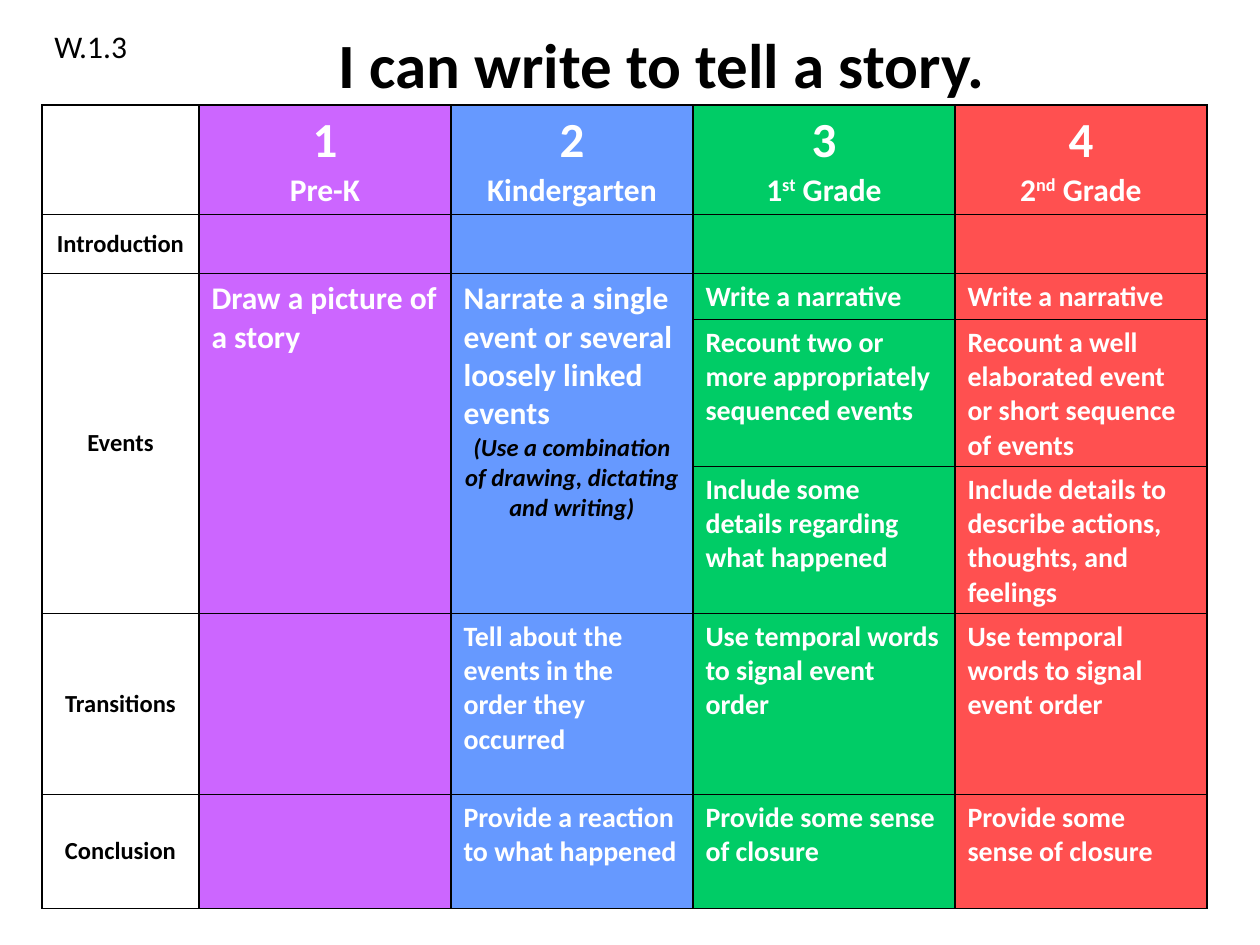
from lxml.etree import SubElement
from pptx import Presentation
from pptx.dml.color import RGBColor
from pptx.enum.text import MSO_ANCHOR, PP_ALIGN
from pptx.oxml.ns import qn
from pptx.util import Emu, Pt

SCALE = 914400 / 126
FONT = "Calibri"
COLORS = {"black": "000000", "white": "FFFFFF", "purple": "CC66FF",
          "blue": "6699FF", "green": "00CC66", "red": "FF5050"}
FILLS = [None, "purple", "blue", "green", "red"]
WIDTHS = [157, 252, 242, 262, 252]
HEIGHTS = [109, 59, 46, 147, 147, 181, 114]
GRADES = [[("Pre-K", 0)], [("Kindergarten", 0)],
          [("1", 0), ("st", 30), (" Grade", 0)],
          [("2", 0), ("nd", 30), (" Grade", 0)]]
LABELS = {1: "Introduction", 2: "Events", 5: "Transitions", 6: "Conclusion"}
GOALS = [
    (2, 1, "Draw a picture of a story", 18),
    (2, 2, "Narrate a single event or several loosely linked events", 18),
    (2, 3, "Write a narrative", 16),
    (2, 4, "Write a narrative", 16),
    (3, 3, "Recount two or more appropriately sequenced events", 16),
    (3, 4, "Recount a well elaborated event or short sequence of events", 16),
    (4, 3, "Include some details regarding what happened", 16),
    (4, 4, "Include details to describe actions, thoughts, and feelings", 16),
    (5, 2, "Tell about the events in the order they occurred", 16),
    (5, 3, "Use temporal words to signal event order", 16),
    (5, 4, "Use temporal words to signal event order", 16),
    (6, 2, "Provide a reaction to what happened", 16),
    (6, 3, "Provide some sense of closure", 16),
    (6, 4, "Provide some sense of closure", 16),
]


def px(n):
    return Emu(round(n * SCALE))


def rgb(name):
    return RGBColor.from_string(COLORS[name])


def add_run(para, text, size, color, bold=True, italic=False, raised=0):
    run = para.add_run()
    run.text = text
    font = run.font
    font.name, font.size = FONT, Pt(size)
    font.bold, font.italic = bold, italic
    font.color.rgb = rgb(color)
    if raised:
        run._r.get_or_add_rPr().set("baseline", str(raised * 1000))


def add_label(slide, box, text, size, bold, align, anchor):
    frame = slide.shapes.add_textbox(*map(px, box)).text_frame
    frame.word_wrap = True
    frame.vertical_anchor = anchor
    para = frame.paragraphs[0]
    para.alignment = align
    add_run(para, text, size, "black", bold)


def style_cell(cell, color):
    props = cell._tc.get_or_add_tcPr()
    for side in ("lnL", "lnR", "lnT", "lnB"):
        line = SubElement(props, qn(f"a:{side}"), w=str(Pt(1)))
        fill = SubElement(line, qn("a:solidFill"))
        SubElement(fill, qn("a:srgbClr"), val=COLORS["black"])
    if color:
        cell.fill.solid()
        cell.fill.fore_color.rgb = rgb(color)
    else:
        cell.fill.background()


def add_grid(slide):
    box = map(px, (42, 105, sum(WIDTHS), sum(HEIGHTS)))
    table = slide.shapes.add_table(len(HEIGHTS), len(WIDTHS), *box).table
    table.first_row = table.horz_banding = False
    for col, width in zip(table.columns, WIDTHS):
        col.width = px(width)
    for row, height in zip(table.rows, HEIGHTS):
        row.height = px(height)
        for cell, color in zip(row.cells, FILLS):
            style_cell(cell, color)
    for col in range(3):
        table.cell(2, col).merge(table.cell(4, col))
    return table


def fill_heads(table):
    for col, grade in enumerate(GRADES, 1):
        frame = table.cell(0, col).text_frame
        top, low = frame.paragraphs[0], frame.add_paragraph()
        top.alignment = low.alignment = PP_ALIGN.CENTER
        add_run(top, str(col), 28, "white")
        for text, raised in grade:
            add_run(low, text, 18, "white", raised=raised)


def fill_labels(table):
    for row, text in LABELS.items():
        cell = table.cell(row, 0)
        cell.vertical_anchor = MSO_ANCHOR.MIDDLE
        para = cell.text_frame.paragraphs[0]
        para.alignment = PP_ALIGN.CENTER
        add_run(para, text, 14, "black")


def fill_goals(table):
    for row, col, text, size in GOALS:
        para = table.cell(row, col).text_frame.paragraphs[0]
        add_run(para, text, size, "white")
    note = table.cell(2, 2).text_frame.add_paragraph()
    note.alignment = PP_ALIGN.CENTER
    add_run(note, "(Use a combination of drawing, dictating and writing)",
            14, "black", italic=True)


def main():
    deck = Presentation()
    deck.slide_width, deck.slide_height = px(1260), px(945)
    slide = deck.slides.add_slide(deck.slide_layouts[6])
    add_label(slide, (126, 0, 1071, 126), "I can write to tell a story.",
              36, True, PP_ALIGN.CENTER, MSO_ANCHOR.MIDDLE)
    add_label(slide, (42, 21, 179, 50), "W.1.3",
              18, False, PP_ALIGN.LEFT, MSO_ANCHOR.TOP)
    table = add_grid(slide)
    fill_heads(table)
    fill_labels(table)
    fill_goals(table)
    deck.save("out.pptx")


if __name__ == "__main__":
    main()
